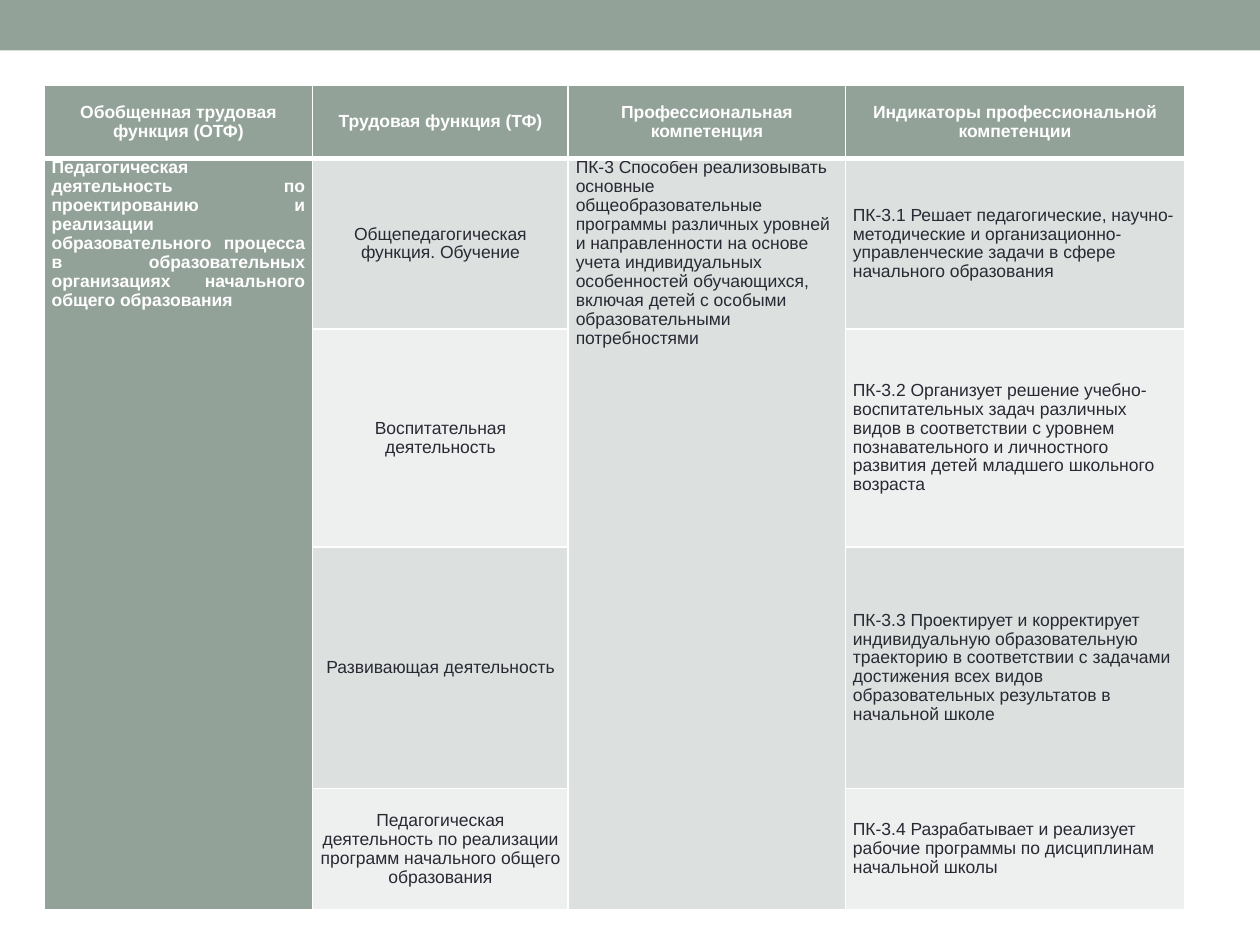
from lxml.etree import SubElement as Sub
from pptx import Presentation
from pptx.dml.color import RGBColor as Rgb
from pptx.enum.shapes import MSO_SHAPE as Shape
from pptx.enum.text import MSO_ANCHOR as Anchor, PP_ALIGN as Align
from pptx.oxml.ns import qn
from pptx.util import Inches, Pt

# Content
HEAD = ["Обобщенная трудовая функция (ОТФ)", "Трудовая функция (ТФ)",
        "Профессиональная компетенция", "Индикаторы профессиональной компетенции"]
FIELD = ("Педагогическая деятельность по проектированию и реализации образовательного "
         "процесса в образовательных организациях начального общего образования")
SKILL = ("ПК-3 Способен реализовывать основные общеобразовательные программы различных "
         "уровней и направленности на основе учета индивидуальных особенностей "
         "обучающихся, включая детей с особыми образовательными потребностями")
TASKS = [
    ("Общепедагогическая функция. Обучение",
     "ПК-3.1 Решает педагогические, научно-методические и "
     "организационно-управленческие задачи в сфере начального образования"),
    ("Воспитательная деятельность",
     "ПК-3.2 Организует решение учебно-воспитательных задач различных видов в "
     "соответствии с уровнем познавательного и личностного развития детей "
     "младшего школьного возраста"),
    ("Развивающая деятельность",
     "ПК-3.3 Проектирует и корректирует индивидуальную образовательную траекторию в "
     "соответствии с задачами достижения всех видов образовательных результатов в "
     "начальной школе"),
    ("Педагогическая деятельность по реализации программ начального общего образования",
     "ПК-3.4 Разрабатывает и реализует рабочие программы по дисциплинам начальной школы"),
]
COLS = [2.13, 2.03, 2.2, 2.69]
ROWS = [0.58, 1.35, 1.73, 1.92, 0.96]
LEFT, TOP = 0.35, 0.68

THEME = {"main": "93A299", "odd": "DCE0DE", "even": "EEF0EF", "ink": "292934",
         "white": "FFFFFF", "font": "Arial", "size": 10, "thin": 1, "thick": 3}
INSET = {"margin_left": Inches(0.06), "margin_right": Inches(0.06),
         "margin_top": 0, "margin_bottom": 0}


def hue(name):
    return Rgb.from_string(THEME[name])


def paint(obj, name):
    obj.fill.solid()
    obj.fill.fore_color.rgb = hue(name)


def edge(cell, row):
    """Draw the white cell borders, thick under the header."""
    props = cell._tc.get_or_add_tcPr()
    thick = {0: "lnB", 1: "lnT"}.get(row)
    for tag in ("lnL", "lnR", "lnT", "lnB"):
        width = Pt(THEME["thick" if tag == thick else "thin"])
        line = Sub(props, qn("a:" + tag), w=str(width))
        Sub(Sub(line, qn("a:solidFill")), qn("a:srgbClr"), val=THEME["white"])


def write(cell, text, align, anchor, ink, bold):
    cell.text = text
    for key, val in {**INSET, "vertical_anchor": anchor}.items():
        setattr(cell, key, val)
    para = cell.text_frame.paragraphs[0]
    para.alignment, para.line_spacing = align, 0.97
    font = para.runs[0].font
    for key, val in {"name": THEME["font"], "size": Pt(THEME["size"]), "bold": bold}.items():
        setattr(font, key, val)
    font.color.rgb = hue(ink)


def main():
    deck = Presentation()
    deck.slide_width, deck.slide_height = Inches(10), Inches(7.5)
    slide = deck.slides.add_slide(deck.slide_layouts[6])

    # Top band
    band = slide.shapes.add_shape(Shape.RECTANGLE, 0, 0, deck.slide_width, Inches(0.4))
    band.shadow.inherit = False
    paint(band, "main")
    band.line.fill.background()

    # Table grid
    table = slide.shapes.add_table(
        len(ROWS), len(COLS), Inches(LEFT), Inches(TOP),
        Inches(sum(COLS)), Inches(sum(ROWS))).table
    for col, width in zip(table.columns, COLS):
        col.width = Inches(width)
    for row, height in zip(table.rows, ROWS):
        row.height = Inches(height)

    # Borders and fills
    for r in range(len(ROWS)):
        for c in range(len(COLS)):
            cell = table.cell(r, c)
            edge(cell, r)
            if r == 0 or c == 0:
                tone = "main"
            else:
                tone = "odd" if r % 2 or c == 2 else "even"
            paint(cell, tone)
    for c in (0, 2):
        table.cell(1, c).merge(table.cell(len(ROWS) - 1, c))

    # Text
    for c, text in enumerate(HEAD):
        write(table.cell(0, c), text, Align.CENTER, Anchor.MIDDLE, "white", True)
    write(table.cell(1, 0), FIELD, Align.JUSTIFY, Anchor.TOP, "white", True)
    write(table.cell(1, 2), SKILL, Align.LEFT, Anchor.TOP, "ink", False)
    for r, (task, sign) in enumerate(TASKS, 1):
        write(table.cell(r, 1), task, Align.CENTER, Anchor.MIDDLE, "ink", False)
        write(table.cell(r, 3), sign, Align.LEFT, Anchor.MIDDLE, "ink", False)

    deck.save("out.pptx")


if __name__ == "__main__":
    main()
